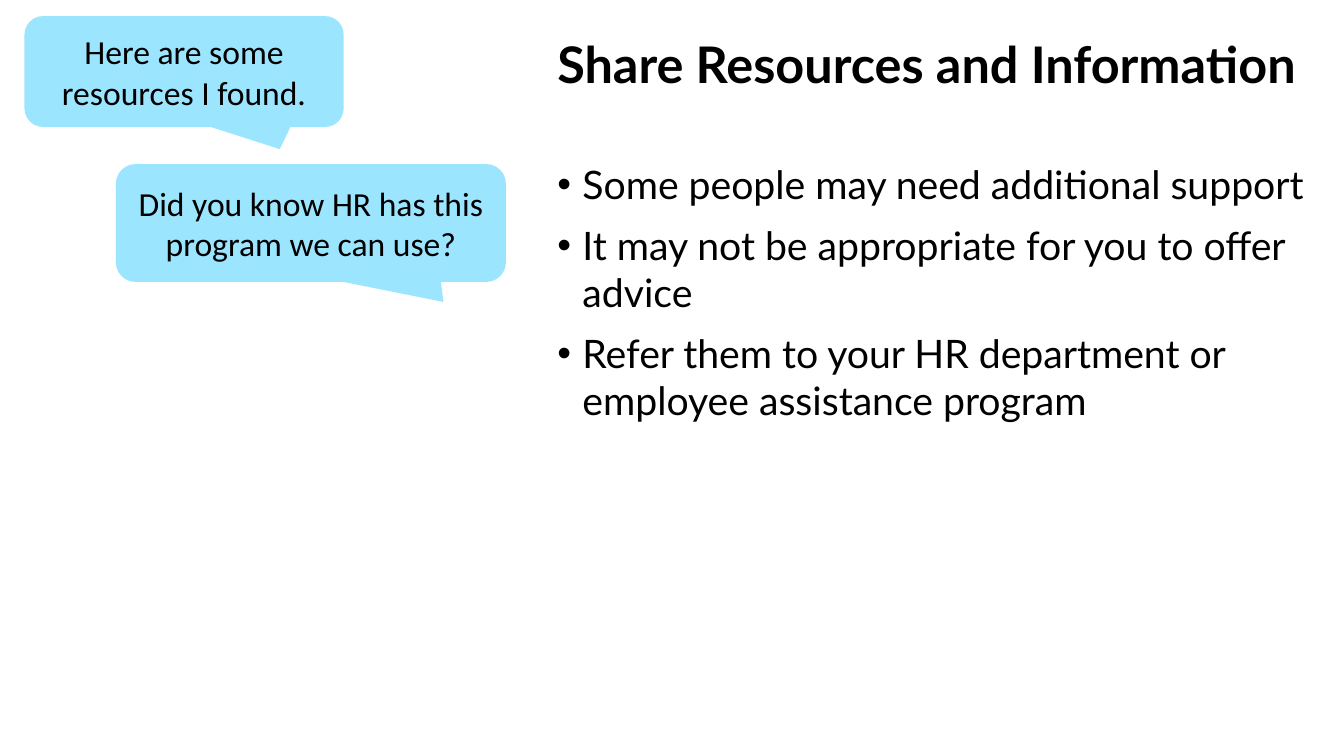
import pptx
import pptx.dml.color
import pptx.enum.shapes
import pptx.enum.text
import pptx.oxml
import pptx.oxml.ns
import pptx.util

Pt = pptx.util.Pt
ALIGN = pptx.enum.text.PP_ALIGN
ANCHOR = pptx.enum.text.MSO_ANCHOR

COLOURS = {"text": "000000", "bubble": "9BE5FF", "page": "FFFFFF"}
TEXT_LEFT, TEXT_WIDTH = 391, 563.8
BULLET_INDENT = 18

TITLE_FONT = {"name": "Lato", "size": Pt(36), "bold": True}
BULLET_FONT = {"name": "Lato", "size": Pt(28)}
BUBBLE_FONT = {"name": "Calibri", "size": Pt(24)}

BULLETS = [
    "Some people may need additional support",
    "It may not be appropriate for you to offer advice",
    "Refer them to your HR department or employee assistance program",
]
# Text, place (left, top, width, height) and tail tip relative to the centre
BUBBLES = [
    ("Here are some resources I found.", (17.5, 11.5, 228, 79.2), (0.3, 0.7)),
    ("Did you know HR has this program we can use?", (82.8, 117.2, 278.6, 84.2), (0.34, 0.67)),
]


def colour(name):
    return pptx.dml.color.RGBColor.from_string(COLOURS[name])


def apply(target, values):
    for name, value in values.items():
        setattr(target, name, value)


def write(para, text, font, layout):
    para.add_run().text = text
    apply(para, layout)
    apply(para.font, font)
    para.font.color.rgb = colour("text")


def add_text_box(page, place, anchor):
    box = page.shapes.add_textbox(*map(Pt, place))
    apply(box.text_frame, {"word_wrap": True, "vertical_anchor": anchor})
    return box.text_frame


def add_title(page, text):
    frame = add_text_box(page, (TEXT_LEFT, 5.8, TEXT_WIDTH, 84.2), ANCHOR.MIDDLE)
    write(frame.paragraphs[0], text, TITLE_FONT, {"line_spacing": 0.9})


def add_bullet_mark(para):
    """Give the paragraph a round bullet with a hanging indent."""
    properties = para._p.get_or_add_pPr()
    properties.set("marL", str(Pt(BULLET_INDENT)))
    properties.set("indent", str(-Pt(BULLET_INDENT)))
    namespace = pptx.oxml.ns.nsdecls("a")
    for element in ('buFont {} typeface="Arial"', 'buChar {} char="•"'):
        properties.append(pptx.oxml.parse_xml(f"<a:{element.format(namespace)}/>"))


def add_bullets(page, texts):
    frame = add_text_box(page, (TEXT_LEFT, 110.9, TEXT_WIDTH, 401), ANCHOR.TOP)
    for index, text in enumerate(texts):
        para = frame.add_paragraph() if index else frame.paragraphs[0]
        add_bullet_mark(para)
        write(para, text, BULLET_FONT, {"space_before": Pt(10 if index else 0)})


def add_bubble(page, text, place, tail):
    kind = pptx.enum.shapes.MSO_SHAPE.ROUNDED_RECTANGULAR_CALLOUT
    bubble = page.shapes.add_shape(kind, *map(Pt, place))
    for index, value in enumerate((*tail, 0.167)):
        bubble.adjustments[index] = value
    bubble.shadow.inherit = False
    bubble.fill.solid()
    bubble.fill.fore_color.rgb = colour("bubble")
    bubble.line.fill.background()
    frame = bubble.text_frame
    apply(frame, {"word_wrap": True, "vertical_anchor": ANCHOR.MIDDLE})
    write(frame.paragraphs[0], text, BUBBLE_FONT, {"alignment": ALIGN.CENTER})


def main():
    deck = pptx.Presentation()
    apply(deck, {"slide_width": Pt(960), "slide_height": Pt(540)})
    page = deck.slides.add_slide(deck.slide_layouts[6])
    page.background.fill.solid()
    page.background.fill.fore_color.rgb = colour("page")
    add_title(page, "Share Resources and Information")
    for bubble in BUBBLES:
        add_bubble(page, *bubble)
    add_bullets(page, BULLETS)
    deck.save("out.pptx")


if __name__ == "__main__":
    main()
